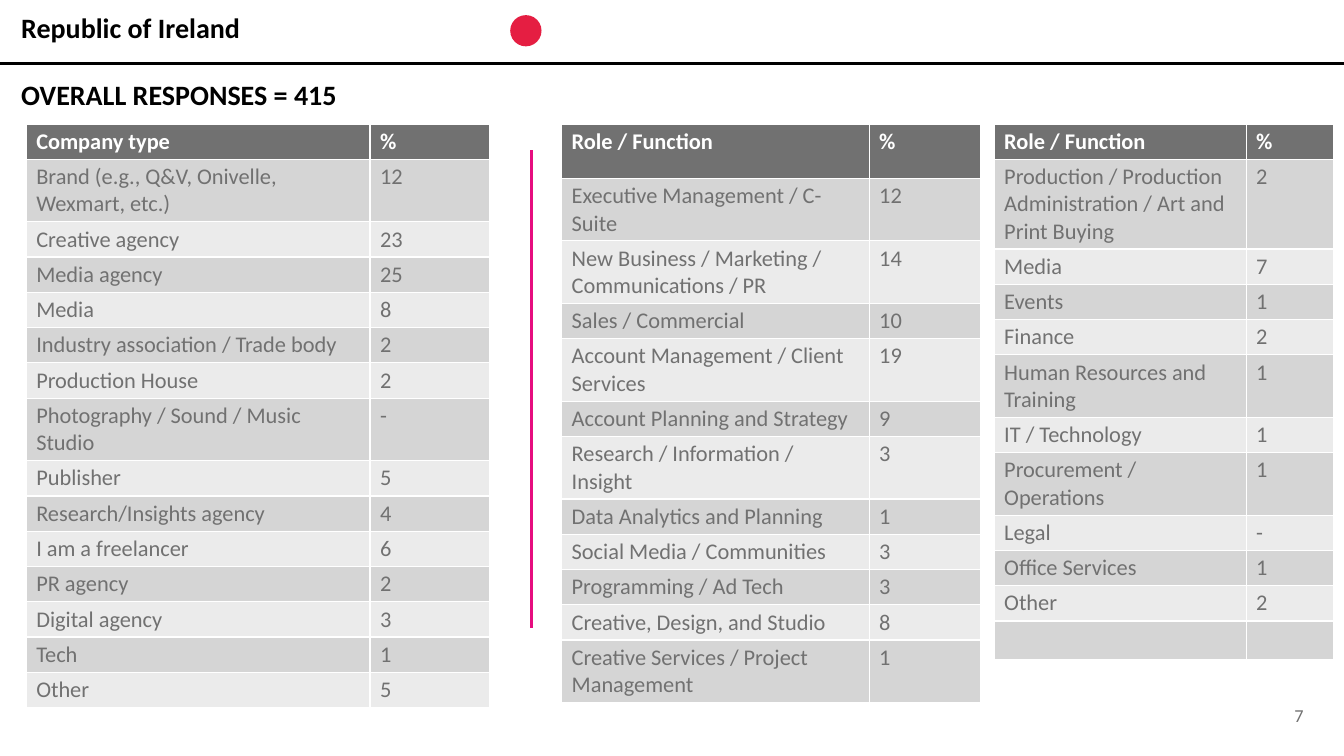
"""Build the Republic of Ireland survey slide with three response tables."""
from dataclasses import dataclass

from pptx import Presentation
from pptx import util as u
from pptx.dml.color import RGBColor
from pptx.enum import shapes, text
from pptx.oxml import parse_xml
from pptx.oxml.ns import nsdecls
from pptx.slide import Slide

WIDTH, HEIGHT = u.Inches(13.33), u.Inches(7.5)
FONT = "Calibri"
BLACK = RGBColor(0x00, 0x00, 0x00)
WHITE = RGBColor(0xFF, 0xFF, 0xFF)
GREY = RGBColor(0x71, 0x71, 0x71)
BANDS = (RGBColor(0xEB, 0xEB, 0xEB), RGBColor(0xD5, 0xD5, 0xD5))
RED = RGBColor(0xE5, 0x1E, 0x42)
PINK = RGBColor(0xE6, 0x0D, 0x7F)

TABLE_TOP = 16.4
LINE_HEIGHT = 3.6
ROW_PADDING = 1.07
CELL_INSET = 0.53


@dataclass(frozen=True)
class Entry:
    label: str
    share: str
    lines: int = 1


@dataclass(frozen=True)
class ResponseTable:
    left: float
    label_width: float
    share_width: float
    heading: str
    header_height: float
    entries: tuple[Entry, ...]


@dataclass(frozen=True)
class Rule:
    start: tuple[float, float]
    end: tuple[float, float]
    colour: RGBColor
    weight: float


@dataclass(frozen=True)
class Label:
    left: float
    top: float
    width: float
    height: float
    lines: tuple[str, ...]
    size: float
    colour: RGBColor
    bold: bool
    align: text.PP_ALIGN
    anchor: text.MSO_ANCHOR
    gap: float = 0


TABLES = (
    ResponseTable(1.95, 25.58, 8.93, "Company type", 4.67, (
        Entry("Brand (e.g., Q&V, Onivelle, Wexmart, etc.)", "12", 2),
        Entry("Creative agency", "23"),
        Entry("Media agency", "25"),
        Entry("Media", "8"),
        Entry("Industry association / Trade body", "2"),
        Entry("Production House", "2"),
        Entry("Photography / Sound / Music Studio", "-", 2),
        Entry("Publisher", "5"),
        Entry("Research/Insights agency", "4"),
        Entry("I am a freelancer", "6"),
        Entry("PR agency", "2"),
        Entry("Digital agency", "3"),
        Entry("Tech", "1"),
        Entry("Other", "5"),
    )),
    ResponseTable(41.79, 22.88, 8.33, "Role / Function", 7.2, (
        Entry("Executive Management / C-Suite", "12", 2),
        Entry("New Business / Marketing / Communications / PR", "14", 2),
        Entry("Sales / Commercial", "10"),
        Entry("Account Management / Client Services", "19", 2),
        Entry("Account Planning and Strategy", "9"),
        Entry("Research / Information / Insight", "3", 2),
        Entry("Data Analytics and Planning", "1"),
        Entry("Social Media / Communities", "3"),
        Entry("Programming / Ad Tech", "3"),
        Entry("Creative, Design, and Studio", "8"),
        Entry("Creative Services / Project Management", "1", 2),
    )),
    ResponseTable(73.97, 18.75, 6.53, "Role / Function", 4.67, (
        Entry("Production / Production Administration / Art and Print Buying", "2", 3),
        Entry("Media", "7"),
        Entry("Events", "1"),
        Entry("Finance", "2"),
        Entry("Human Resources and Training", "1", 2),
        Entry("IT / Technology", "1"),
        Entry("Procurement / Operations", "1", 2),
        Entry("Legal", "-"),
        Entry("Office Services", "1"),
        Entry("Other", "2"),
        Entry("", ""),
    )),
)
RULES = (
    Rule((0, 8.4), (100, 8.4), BLACK, 1.5),
    Rule((39.53, 83.07), (39.53, 19.87), PINK, 1.75),
)
LABELS = (
    Label(1.58, 1.33, 94.07, 5.2, ("Republic of Ireland", "OVERALL RESPONSES = 415"),
          20, BLACK, True, text.PP_ALIGN.LEFT, text.MSO_ANCHOR.TOP, 24.4),
    Label(89.05, 93.2, 7.95, 2.93, ("7",),
          13, GREY, False, text.PP_ALIGN.RIGHT, text.MSO_ANCHOR.MIDDLE),
)


def across(percent: float) -> u.Emu:
    """Turn a percentage of the slide width into a length."""
    return u.Emu(round(WIDTH * percent / 100))


def down(percent: float) -> u.Emu:
    """Turn a percentage of the slide height into a length."""
    return u.Emu(round(HEIGHT * percent / 100))


def add_span(para, words: str, size: float, colour: RGBColor, bold: bool) -> None:
    """Add one formatted run to a paragraph."""
    span = para.add_run()
    span.text = words
    span.font.name = FONT
    span.font.size = u.Pt(size)
    span.font.bold = bold
    span.font.color.rgb = colour


def draw_rule(page: Slide, rule: Rule) -> None:
    """Draw a straight line without a shadow."""
    line = page.shapes.add_connector(
        shapes.MSO_CONNECTOR.STRAIGHT, across(rule.start[0]), down(rule.start[1]),
        across(rule.end[0]), down(rule.end[1]))
    line.line.color.rgb = rule.colour
    line.line.width = u.Pt(rule.weight)
    line._element.spPr.append(parse_xml(f"<a:effectLst {nsdecls('a')}/>"))


def draw_dot(page: Slide) -> None:
    """Draw the red dot in the header."""
    dot = page.shapes.add_shape(shapes.MSO_SHAPE.OVAL, across(37.96), down(2),
                                across(2.33), down(4.13))
    dot.shadow.inherit = False
    dot.fill.solid()
    dot.fill.fore_color.rgb = RED
    dot.line.fill.background()


def draw_label(page: Slide, label: Label) -> None:
    """Draw a text box with one paragraph per line."""
    box = page.shapes.add_textbox(across(label.left), down(label.top),
                                  across(label.width), down(label.height))
    frame = box.text_frame
    frame.word_wrap = True
    frame.vertical_anchor = label.anchor
    frame.margin_left = frame.margin_right = frame.margin_top = frame.margin_bottom = 0
    for index, words in enumerate(label.lines):
        para = frame.add_paragraph() if index else frame.paragraphs[0]
        para.alignment = label.align
        if index:
            para.space_before = u.Pt(label.gap)
        add_span(para, words, label.size, label.colour, label.bold)


def draw_table(page: Slide, spec: ResponseTable) -> None:
    """Draw a response table with a dark header and banded rows."""
    heights = [spec.header_height]
    heights += [entry.lines * LINE_HEIGHT + ROW_PADDING for entry in spec.entries]
    widths = (spec.label_width, spec.share_width)
    grid = page.shapes.add_table(
        len(heights), len(widths), across(spec.left), down(TABLE_TOP),
        across(sum(widths)), down(sum(heights))).table
    for column, width in zip(grid.columns, widths):
        column.width = across(width)
    rows = (Entry(spec.heading, "%"), *spec.entries)
    for index, (row, height, entry) in enumerate(zip(grid.rows, heights, rows)):
        row.height = down(height)
        header = index == 0
        for cell, words in zip(row.cells, (entry.label, entry.share)):
            cell.margin_top = cell.margin_bottom = down(CELL_INSET)
            cell.fill.solid()
            cell.fill.fore_color.rgb = GREY if header else BANDS[index % 2]
            add_span(cell.text_frame.paragraphs[0], words, 16,
                     WHITE if header else GREY, header)


def main() -> None:
    """Assemble and save the deck."""
    deck = Presentation()
    deck.slide_width, deck.slide_height = WIDTH, HEIGHT
    page = deck.slides.add_slide(deck.slide_layouts[6])
    draw_dot(page)
    for rule in RULES:
        draw_rule(page, rule)
    for label in LABELS:
        draw_label(page, label)
    for table in TABLES:
        draw_table(page, table)
    deck.save("out.pptx")


if __name__ == "__main__":
    main()
